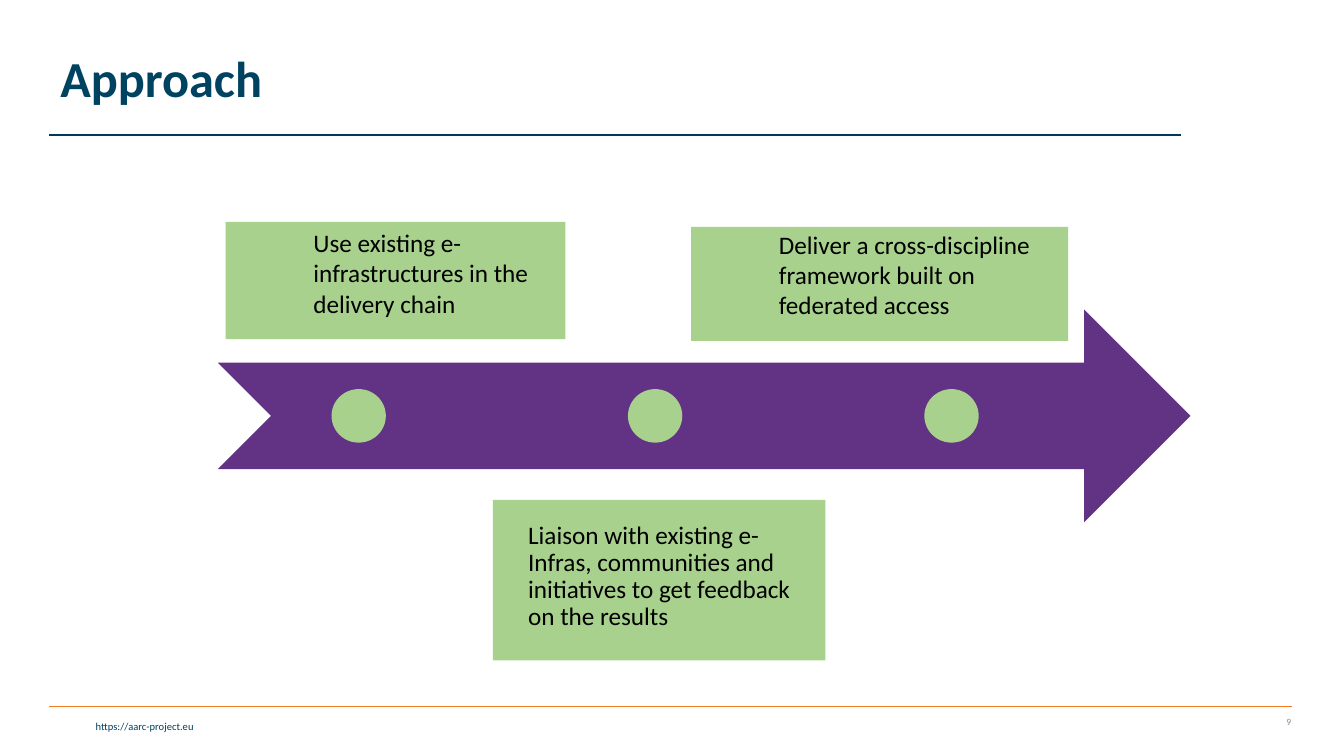
from pptx import Presentation
from pptx.dml.color import RGBColor
from pptx.enum.shapes import MSO_CONNECTOR, MSO_SHAPE
from pptx.enum.text import MSO_ANCHOR, PP_ALIGN
from pptx.oxml.ns import qn
from pptx.util import Cm, Pt
from lxml import etree

LINE = MSO_CONNECTOR.STRAIGHT
ARROW, CIRCLE, BOX = MSO_SHAPE.NOTCHED_RIGHT_ARROW, MSO_SHAPE.OVAL, MSO_SHAPE.RECTANGLE
TOP, MIDDLE, BOTTOM = MSO_ANCHOR.TOP, MSO_ANCHOR.MIDDLE, MSO_ANCHOR.BOTTOM
LEFT, RIGHT = PP_ALIGN.LEFT, PP_ALIGN.RIGHT

FONT = "Calibri"
COLORS = {
    "title": "004361", "title rule": "003959", "footer rule": "F57B20",
    "address": "003F5E", "number": "8C8C8C",
    "arrow": "623384", "green": "A9D18E", "text": "000000",
}
RULES = [
    ("title rule", 1.24, 29.77, 3.4),
    ("footer rule", 1.24, 32.56, 17.81),
]
LABELS = [
    ("Approach", (1.27, 0.2, 26.7, 3.68), MIDDLE,
     {"alignment": LEFT, "line_spacing": 0.9}, {"size": Pt(36), "bold": True}, "title"),
    ("https://aarc-project.eu", (0.08, 18.01, 5.05, 0.58), TOP,
     {"alignment": RIGHT}, {"size": Pt(7.5)}, "address"),
    ("9", (30.73, 17.81, 2.06, 0.76), MIDDLE,
     {"alignment": RIGHT}, {"size": Pt(6.8)}, "number"),
]
ABOVE = (BOTTOM, (2.21, 0.05, 0.8, 0.53), {"alignment": LEFT})
BELOW = (TOP, (0.89, 0.56, 0.8, 0.56), {"alignment": LEFT, "line_spacing": 0.9})
STEPS = [
    ("Use existing e-infrastructures in the delivery chain",
     (5.69, 5.59, 8.56, 2.96), ABOVE),
    ("Liaison with existing e-Infras, communities and initiatives to get feedback on the results",
     (12.42, 12.6, 8.38, 4.04), BELOW),
    ("Deliver a cross-discipline framework built on federated access",
     (17.42, 5.72, 9.5, 2.87), ABOVE),
]
ARROW_BOX = (5.49, 7.8, 24.51, 5.36)
DOT_SIZE = (1.37, 1.35)
FIRST_DOT, DOT_STEP = 9.04, 7.47


def color(name):
    return RGBColor.from_string(COLORS[name])


def add_rule(slide, name, start, end, y):
    rule = slide.shapes.add_connector(LINE, Cm(start), Cm(y), Cm(end), Cm(y))
    rule.line.color.rgb = color(name)
    rule.line.width = Pt(1)
    etree.SubElement(rule._element.spPr, qn("a:effectLst"))


def add_block(slide, kind, box, fill):
    shape = slide.shapes.add_shape(kind, *map(Cm, box))
    shape.shadow.inherit = False
    shape.fill.solid()
    shape.fill.fore_color.rgb = color(fill)
    shape.line.fill.background()
    return shape


def write(shape, text, anchor, paragraph_format, font_format, color_name, insets=(0.25, 0.13, 0.25, 0.13)):
    frame = shape.text_frame
    frame.word_wrap = True
    frame.vertical_anchor = anchor
    for side, inset in zip(("left", "top", "right", "bottom"), insets):
        setattr(frame, f"margin_{side}", Cm(inset))
    paragraph = frame.paragraphs[0]
    for name, value in paragraph_format.items():
        setattr(paragraph, name, value)
    run = paragraph.add_run()
    run.text = text
    for name, value in {"name": FONT, **font_format}.items():
        setattr(run.font, name, value)
    run.font.color.rgb = color(color_name)


def main():
    presentation = Presentation()
    presentation.slide_width, presentation.slide_height = Cm(33.87), Cm(19.05)
    slide = presentation.slides.add_slide(presentation.slide_layouts[6])

    for rule in RULES:
        add_rule(slide, *rule)
    for text, box, *style in LABELS:
        write(slide.shapes.add_textbox(*map(Cm, box)), text, *style)

    add_block(slide, ARROW, ARROW_BOX, "arrow")
    dot_width, dot_height = DOT_SIZE
    dot_top = ARROW_BOX[1] + (ARROW_BOX[3] - dot_height) / 2
    for index, (text, box, (anchor, insets, paragraph_format)) in enumerate(STEPS):
        card = add_block(slide, BOX, box, "green")
        write(card, text, anchor, paragraph_format, {"size": Pt(18)}, "text", insets)
        dot_left = FIRST_DOT + index * DOT_STEP - dot_width / 2
        add_block(slide, CIRCLE, (dot_left, dot_top, dot_width, dot_height), "green")

    presentation.save("out.pptx")


if __name__ == "__main__":
    main()
